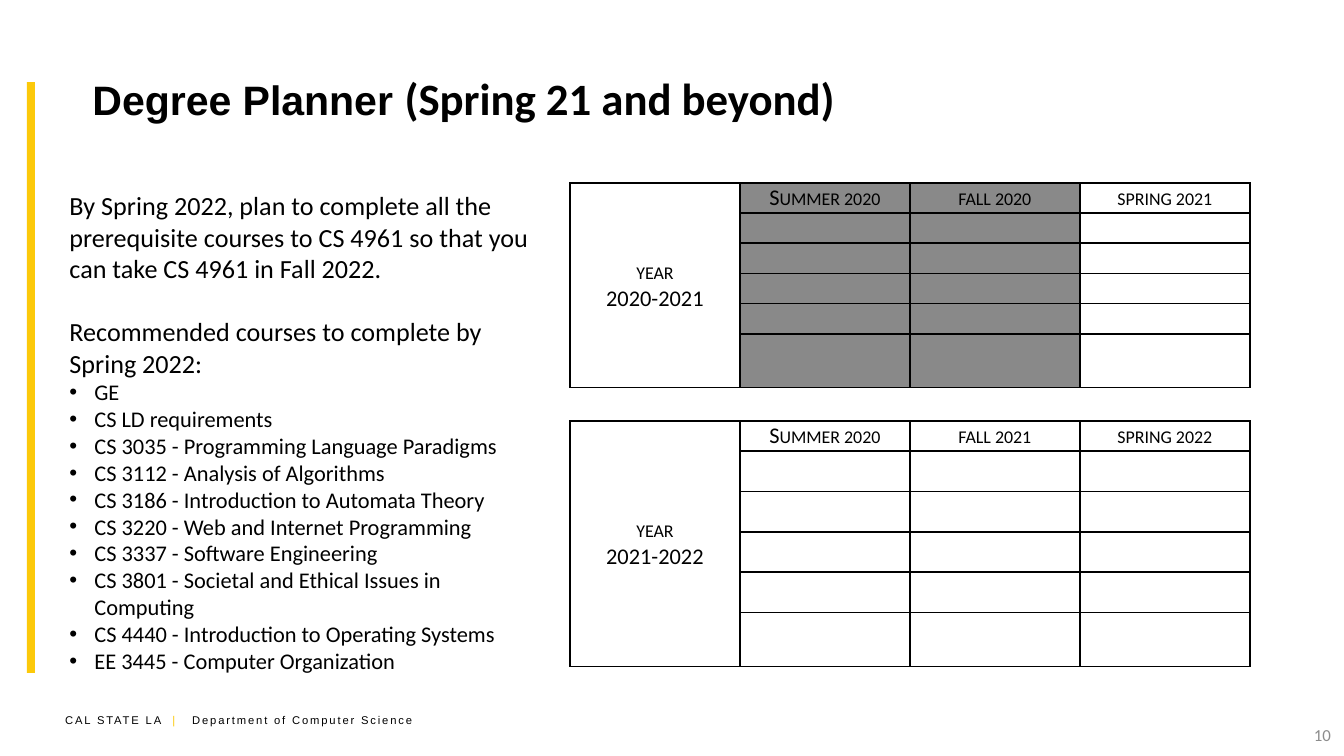
from lxml.etree import SubElement
from pptx import Presentation
from pptx.dml.color import RGBColor
from pptx.enum.shapes import MSO_SHAPE
from pptx.enum.text import MSO_ANCHOR, MSO_AUTO_SIZE, PP_ALIGN
from pptx.oxml.ns import qn
from pptx.util import Pt

EMU_PER_PX = 914400 / 134.4
BLACK = RGBColor(0x00, 0x00, 0x00)
GOLD = RGBColor(0xFC, 0xC9, 0x0A)
SHADE = RGBColor(0x89, 0x89, 0x89)
PAGE_GRAY = RGBColor(0x8C, 0x8C, 0x8C)

COURSES = [
    "GE",
    "CS LD requirements",
    "CS 3035 - Programming Language Paradigms",
    "CS 3112 - Analysis of Algorithms",
    "CS 3186 - Introduction to Automata Theory",
    "CS 3220 - Web and Internet Programming",
    "CS 3337 - Software Engineering",
    "CS 3801 - Societal and Ethical Issues in Computing",
    "CS 4440 - Introduction to Operating Systems",
    "EE 3445 - Computer Organization",
]


def px(length):
    return round(length * EMU_PER_PX)


def place(shape, box):
    shape.left, shape.top, shape.width, shape.height = map(px, box)


def write(paragraph, text, size=12, font="Calibri", color=BLACK, bold=False,
          align=None, small_caps=False, spacing=None):
    """Append one formatted run; spacing is in points between letters."""
    run = paragraph.add_run()
    run.text = text
    run.font.size = Pt(size)
    run.font.name = font
    run.font.color.rgb = color
    run.font.bold = bold
    if align is not None:
        paragraph.alignment = align
    properties = run.font._element
    if small_caps:
        properties.set("cap", "small")
    if spacing:
        properties.set("spc", str(spacing * 100))


def set_bullet(paragraph, indent=0, character=None):
    """Set a hanging bullet, or no bullet when character is None."""
    properties = paragraph._p.get_or_add_pPr()
    properties.set("marL", str(px(indent)))
    properties.set("indent", str(-px(indent)))
    if character:
        SubElement(properties, qn("a:buFont"), typeface="Arial")
        SubElement(properties, qn("a:buChar"), char=character)
    else:
        SubElement(properties, qn("a:buNone"))


def add_text_box(slide, box):
    text_box = slide.shapes.add_textbox(*map(px, box))
    text_box.text_frame.word_wrap = True
    return text_box.text_frame


def add_accent_bar(slide, box):
    bar = slide.shapes.add_shape(MSO_SHAPE.RECTANGLE, *map(px, box))
    bar.shadow.inherit = False
    bar.fill.solid()
    bar.fill.fore_color.rgb = GOLD
    bar.line.fill.background()


def add_footer(slide, box):
    paragraph = add_text_box(slide, box).paragraphs[0]
    tabs = SubElement(paragraph._p.get_or_add_pPr(), qn("a:tabLst"))
    SubElement(tabs, qn("a:tab"), pos=str(px(127)), algn="l")
    for text, color in [("CAL STATE LA ", BLACK), (" |\t", GOLD),
                        ("Department of Computer Science", BLACK)]:
        write(paragraph, text, size=6, font="Arial", color=color, spacing=1)


def add_page_number(slide, box, number):
    frame = add_text_box(slide, box)
    frame.vertical_anchor = MSO_ANCHOR.MIDDLE
    write(frame.paragraphs[0], number, size=9, color=PAGE_GRAY, align=PP_ALIGN.RIGHT)


def fill_title(title, box):
    place(title, box)
    frame = title.text_frame
    frame.auto_size = MSO_AUTO_SIZE.NONE
    frame.vertical_anchor = MSO_ANCHOR.MIDDLE
    paragraph = frame.paragraphs[0]
    write(paragraph, "Degree Planner ", size=22, font="Arial", bold=True, align=PP_ALIGN.LEFT)
    write(paragraph, "(Spring 21 and beyond)", size=24, bold=True)


def fill_recommendations(body, box):
    place(body, box)
    frame = body.text_frame
    frame.auto_size = MSO_AUTO_SIZE.NONE
    frame.vertical_anchor = MSO_ANCHOR.TOP

    goal = frame.paragraphs[0]
    set_bullet(goal)
    goal.space_before = Pt(0)
    write(goal, "By Spring 2022, plan to complete all the prerequisite courses to "
                "CS 4961 so that you can take CS 4961 in Fall 2022.", size=14)

    heading = frame.add_paragraph()
    set_bullet(heading)
    heading.space_before = Pt(17)
    write(heading, "Recommended courses to complete by Spring 2022:", size=14)

    for course in COURSES:
        paragraph = frame.add_paragraph()
        set_bullet(paragraph, indent=25, character="•")
        paragraph.space_before = Pt(0)
        write(paragraph, course)


def format_cell(cell, empty_size, fill=None):
    """Give a cell black borders, an optional fill and the size of its empty line."""
    properties = cell._tc.get_or_add_tcPr()
    for side in ("a:lnL", "a:lnR", "a:lnT", "a:lnB"):
        line = SubElement(properties, qn(side), w=str(Pt(1)))
        color = SubElement(line, qn("a:solidFill"))
        SubElement(color, qn("a:srgbClr"), val=str(BLACK))
    if fill is None:
        cell.fill.background()
    else:
        cell.fill.solid()
        cell.fill.fore_color.rgb = fill
    cell.margin_left = cell.margin_right = px(9)
    cell.vertical_anchor = MSO_ANCHOR.MIDDLE
    end = cell.text_frame.paragraphs[0]._p.get_or_add_endParaRPr()
    end.set("sz", str(empty_size * 100))


def add_year_planner(slide, box, year, terms, empty_size, shaded=()):
    """Rows grow with the size of their empty lines; the last one keeps its margins."""
    row_count, column_count = 6, len(terms) + 1
    table = slide.shapes.add_table(row_count, column_count, *map(px, box)).table
    table.first_row = table.horz_banding = False
    last_row = row_count - 1
    for row in range(row_count):
        for column in range(column_count):
            cell = table.cell(row, column)
            size = 18 if row == last_row else empty_size
            format_cell(cell, size, SHADE if column in shaded else None)
            if row < last_row:
                cell.margin_top = cell.margin_bottom = 0

    year_cell = table.cell(0, 0)
    year_cell.merge(table.cell(last_row, 0))
    frame = year_cell.text_frame
    write(frame.paragraphs[0], "year", align=PP_ALIGN.CENTER, small_caps=True)
    write(frame.add_paragraph(), year, align=PP_ALIGN.CENTER)
    for column, term in enumerate(terms, start=1):
        paragraph = table.cell(0, column).text_frame.paragraphs[0]
        write(paragraph, term, align=PP_ALIGN.CENTER, small_caps=True)


def main():
    presentation = Presentation()
    presentation.slide_width, presentation.slide_height = px(1344), px(756)
    slide = presentation.slides.add_slide(presentation.slide_layouts[1])

    add_footer(slide, (52, 707, 392, 27))
    add_accent_bar(slide, (27, 82, 8, 591))
    fill_title(slide.shapes.title, (79, 35, 1196, 126))
    add_year_planner(slide, (570, 183, 680, 181), "2020-2021",
                     ["Summer 2020", "fall 2020", "spring 2021"],
                     empty_size=12, shaded=(1, 2))
    add_page_number(slide, (1031, 715, 313, 40), "10")
    add_year_planner(slide, (570, 421, 680, 181), "2021-2022",
                     ["Summer 2020", "fall 2021", "spring 2022"], empty_size=18)
    fill_recommendations(slide.placeholders[1], (56, 183, 497, 503))

    presentation.save("out.pptx")


if __name__ == "__main__":
    main()
